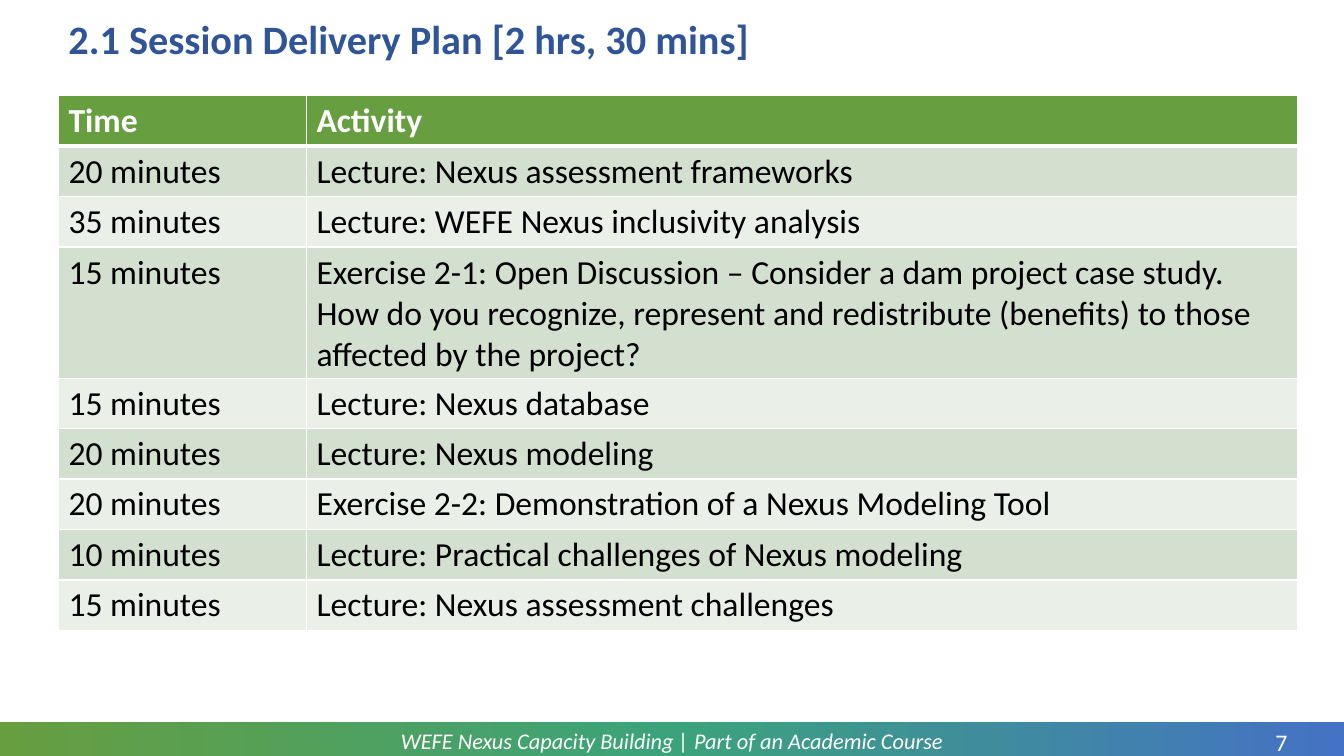
from copy import deepcopy
from dataclasses import dataclass

from lxml import etree
from pptx import Presentation
from pptx.dml.color import RGBColor
from pptx.enum.shapes import MSO_SHAPE
from pptx.enum.text import MSO_ANCHOR, PP_ALIGN
from pptx.oxml.ns import qn
from pptx.slide import Slide
from pptx.table import _Cell
from pptx.text.text import _Paragraph
from pptx.util import Emu, Pt

RECTANGLE = MSO_SHAPE.RECTANGLE
TOP, MIDDLE = MSO_ANCHOR.TOP, MSO_ANCHOR.MIDDLE
LEFT, CENTER = PP_ALIGN.LEFT, PP_ALIGN.CENTER

EMU_PER_PX = 9144  # 100 px to the inch
FONT = "Calibri"
WHITE, BLACK, BLUE, GREEN = "FFFFFF", "000000", "2F5597", "669E40"
BAND_FILLS = ("D3DFCF", "EAF0E8")
FOOTER_GRADIENT = ((0.0, GREEN), (0.5, "3BA37B"), (1.0, "4472C4"))
COLUMN_WIDTHS = (246, 983)
ROW_HEIGHT = 41


@dataclass(frozen=True)
class Area:
    left: int
    top: int
    width: int
    height: int

    def emu(self) -> tuple[Emu, ...]:
        return tuple(px(n) for n in (self.left, self.top, self.width, self.height))


@dataclass(frozen=True)
class Style:
    size: float
    color: str
    bold: bool = False
    italic: bool = False


@dataclass(frozen=True)
class Label:
    text: str
    area: Area
    style: Style
    align: PP_ALIGN = LEFT
    anchor: MSO_ANCHOR = MIDDLE
    line_spacing: float = 1.0
    space_after: int = 0
    has_margins: bool = True


@dataclass(frozen=True)
class Session:
    time: str
    activity: str


TABLE_AREA = Area(58, 95, sum(COLUMN_WIDTHS), 530)
HEADER_STYLE = Style(24, WHITE, bold=True)
BODY_STYLE = Style(24, BLACK)

LABELS = (
    Label("WEFE Nexus Capacity Building | Part of an Academic Course",
          Area(92, 717, 1149, 36), Style(16, WHITE, italic=True), CENTER, space_after=8),
    Label("7", Area(1241, 722, 60, 29), Style(17, WHITE), CENTER, TOP, has_margins=False),
    Label("2.1 Session Delivery Plan [2 hrs, 30 mins]",
          Area(58, 13, 1215, 56), Style(28.8, BLUE, bold=True), line_spacing=0.9),
)

SESSIONS = (
    Session("Time", "Activity"),
    Session("20 minutes", "Lecture: Nexus assessment frameworks"),
    Session("35 minutes", "Lecture: WEFE Nexus inclusivity analysis"),
    Session("15 minutes", "Exercise 2-1: Open Discussion – Consider a dam project case study. "
            "How do you recognize, represent and redistribute (benefits) to those "
            "affected by the project?"),
    Session("15 minutes", "Lecture: Nexus database"),
    Session("20 minutes", "Lecture: Nexus modeling"),
    Session("20 minutes", "Exercise 2-2: Demonstration of a Nexus Modeling Tool"),
    Session("10 minutes", "Lecture: Practical challenges of Nexus modeling"),
    Session("15 minutes", "Lecture: Nexus assessment challenges"),
)


def px(length: int) -> Emu:
    return Emu(length * EMU_PER_PX)


def rgb(color: str) -> RGBColor:
    return RGBColor.from_string(color)


def add_span(para: _Paragraph, text: str, style: Style) -> None:
    span = para.add_run()
    span.text = text
    span.font.name = FONT
    span.font.size = Pt(style.size)
    span.font.bold = style.bold
    span.font.italic = style.italic
    span.font.color.rgb = rgb(style.color)


def add_label(page: Slide, label: Label) -> None:
    frame = page.shapes.add_textbox(*label.area.emu()).text_frame
    frame.word_wrap = True
    frame.vertical_anchor = label.anchor
    if not label.has_margins:
        frame.margin_left = frame.margin_top = frame.margin_right = frame.margin_bottom = 0
    para = frame.paragraphs[0]
    para.alignment = label.align
    para.line_spacing = label.line_spacing
    para.space_after = Pt(label.space_after)
    add_span(para, label.text, label.style)


def add_footer_band(page: Slide) -> None:
    band = page.shapes.add_shape(RECTANGLE, *Area(0, 716, 1333, 38).emu())
    band.shadow.inherit = False
    band.line.fill.background()
    band.fill.gradient()
    band.fill.gradient_angle = 0
    stop_list = band._element.spPr.find(".//" + qn("a:gsLst"))
    stop_list.insert(1, deepcopy(stop_list[0]))  # the default gradient has two stops
    for stop, (position, color) in zip(band.fill.gradient_stops, FOOTER_GRADIENT):
        stop.position = position
        stop.color.rgb = rgb(color)


def set_borders(cell: _Cell, top: int, bottom: int) -> None:
    """Draw white cell borders; top and bottom are widths in points."""
    properties = cell._tc.get_or_add_tcPr()
    widths = {"a:lnL": 1, "a:lnR": 1, "a:lnT": top, "a:lnB": bottom}
    for index, (tag, width) in enumerate(widths.items()):
        line = etree.Element(qn(tag), w=str(Pt(width)))
        fill = etree.SubElement(line, qn("a:solidFill"))
        etree.SubElement(fill, qn("a:srgbClr"), val=WHITE)
        properties.insert(index, line)  # borders come before the cell fill


def add_schedule(page: Slide) -> None:
    box = page.shapes.add_table(len(SESSIONS), len(COLUMN_WIDTHS), *TABLE_AREA.emu())
    table = box.table
    table.horz_banding = False
    for column, width in zip(table.columns, COLUMN_WIDTHS):
        column.width = px(width)
    for index, (row, session) in enumerate(zip(table.rows, SESSIONS)):
        row.height = px(ROW_HEIGHT)
        is_header = index == 0
        color = GREEN if is_header else BAND_FILLS[(index - 1) % 2]
        for cell, text in zip(row.cells, (session.time, session.activity)):
            cell.fill.solid()
            cell.fill.fore_color.rgb = rgb(color)
            set_borders(cell, top=3 if index == 1 else 1, bottom=3 if is_header else 1)
            add_span(cell.text_frame.paragraphs[0], text,
                     HEADER_STYLE if is_header else BODY_STYLE)
    box.height = px(TABLE_AREA.height)


def main() -> None:
    deck = Presentation()
    deck.slide_width, deck.slide_height = px(1333), px(750)
    page = deck.slides.add_slide(deck.slide_layouts[6])
    add_footer_band(page)
    for label in LABELS:
        add_label(page, label)
    add_schedule(page)
    deck.save("out.pptx")


if __name__ == "__main__":
    main()
